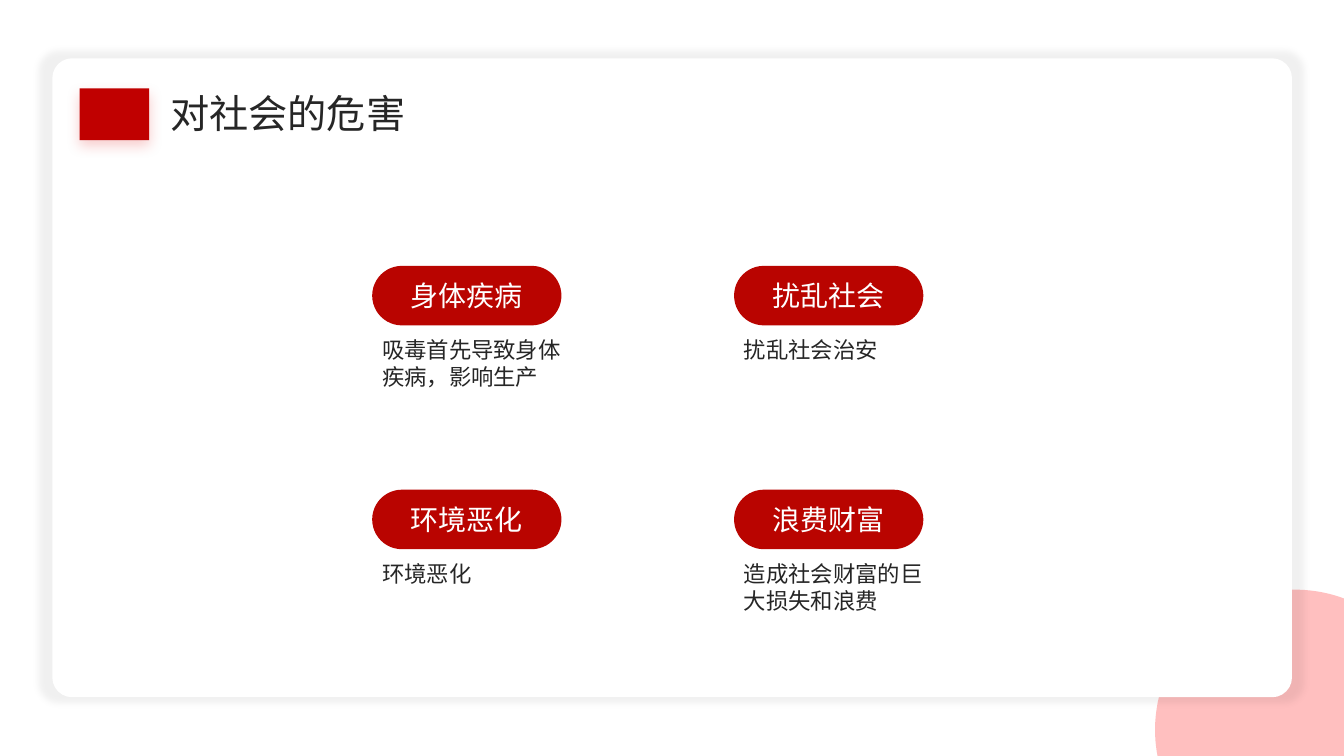
from math import asin, acos, cos, sin, pi

from lxml.etree import SubElement
from pptx import Presentation
from pptx.dml.color import RGBColor
from pptx.enum.shapes import MSO_SHAPE as Shape
from pptx.enum.text import MSO_ANCHOR as Anchor, MSO_AUTO_SIZE as AutoSize, PP_ALIGN as Align
from pptx.oxml.ns import qn
from pptx.util import Cm, Pt

FONT = "Noto Sans CJK SC"
WIDTH, HEIGHT = 33.87, 19.05
RED, PILL_RED, PINK, DARK, WHITE = "C00000", "B90400", "FFBFBF", "262626", "FFFFFF"


def color(hex_code):
    return RGBColor.from_string(hex_code)


def paint(sp, hex_code):
    sp.shadow.inherit = False
    sp.fill.solid()
    sp.fill.fore_color.rgb = color(hex_code)
    sp.line.fill.background()


def add_shape(s, kind, box, hex_code, adj=None):
    sp = s.shapes.add_shape(kind, *map(Cm, box))
    paint(sp, hex_code)
    if adj is not None:
        sp.adjustments[0] = adj
    return sp


def add_shadow(sp, hex_code, alpha, blur, dist=0, angle=0, scale=100):
    effects = sp._element.spPr.find(qn("a:effectLst"))
    shadow = SubElement(effects, qn("a:outerShdw"), blurRad=str(Pt(blur)), dist=str(Pt(dist)),
                        dir=str(angle * 60000), sx=str(scale * 1000), sy=str(scale * 1000),
                        algn="ctr", rotWithShape="0")
    clr = SubElement(shadow, qn("a:srgbClr"), val=hex_code)
    SubElement(clr, qn("a:alpha"), val=str(alpha * 1000))


def set_text(sp, text, size, hex_code, align=Align.LEFT, anchor=Anchor.TOP, wrap=True):
    tf = sp.text_frame
    tf.word_wrap = wrap
    tf.vertical_anchor = anchor
    p = tf.paragraphs[0]
    p.text = text
    p.alignment = align
    p.font.size = Pt(size)
    p.font.color.rgb = color(hex_code)
    p.font.name = FONT
    SubElement(p.font._rPr, qn("a:ea"), typeface=FONT)
    return tf


def add_corner_disc(s, cx, cy, radius, steps=60):
    """Part of a disc that lies within the bottom right corner of the slide."""
    start = pi - asin((HEIGHT - cy) / radius)
    end = 2 * pi - acos((WIDTH - cx) / radius)
    angles = [start + (end - start) * i / steps for i in range(steps + 1)]
    arc = [(Cm(cx + radius * cos(a)), Cm(cy + radius * sin(a))) for a in angles]
    builder = s.shapes.build_freeform(*arc[0])
    builder.add_line_segments(arc[1:] + [(Cm(WIDTH), Cm(HEIGHT))], close=True)
    paint(builder.convert_to_shape(), PINK)


def add_card(s, box):
    sp = add_shape(s, Shape.ROUNDED_RECTANGLE, box, WHITE, 0.5 / box[3])
    add_shadow(sp, "000000", 5, 5, scale=102)


def add_header(s, box, text):
    x, y, w, h = box
    # Plain marker beside the title
    marker = add_shape(s, Shape.RECTANGLE, (x, y + 0.1, 1.75, 1.3), RED)
    add_shadow(marker, "DE0000", 20, 10, 4, 90)
    # Title, brought in front of the card
    title = s.shapes.title
    s.shapes._spTree.append(title._element)
    title.left, title.top, title.width, title.height = map(Cm, (x + 2.03, y, w - 2.03, h))
    tf = set_text(title, text, 28, DARK, wrap=False)
    tf.auto_size = AutoSize.SHAPE_TO_FIT_TEXT


def add_harm(s, box, heading, body):
    x, y, w, h = box
    pill = add_shape(s, Shape.ROUNDED_RECTANGLE, (x, y, 4.77, 1.5), PILL_RED, 0.5)
    set_text(pill, heading, 20, WHITE, Align.CENTER, Anchor.MIDDLE)
    note = s.shapes.add_textbox(*map(Cm, (x, y + 1.65, w, h - 1.65)))
    tf = set_text(note, body, 16, DARK)
    tf.auto_size = AutoSize.SHAPE_TO_FIT_TEXT


def add_harm_grid(s, box, harms, columns=2):
    x, y, w, h = box
    cell_w, cell_h = 5.1, 3.28
    rows = len(harms) // columns
    step_x = (w - cell_w) / (columns - 1)
    step_y = (h - cell_h) / (rows - 1)
    for i, (heading, body) in enumerate(harms):
        row, col = divmod(i, columns)
        add_harm(s, (x + col * step_x, y + row * step_y, cell_w, cell_h), heading, body)


def main():
    prs = Presentation()
    prs.slide_width, prs.slide_height = Cm(WIDTH), Cm(HEIGHT)
    s = prs.slides.add_slide(prs.slide_layouts[5])

    # Backdrop
    add_corner_disc(s, 32.64, 18.39, 3.53)
    add_card(s, (1.32, 1.47, 31.24, 16.1))

    # Content
    add_header(s, (2.01, 2.13, 8.53, 1.45), "对社会的危害")
    add_harm_grid(s, (9.38, 6.7, 14.22, 8.92), [
        ("身体疾病", "吸毒首先导致身体疾病，影响生产"),
        ("扰乱社会", "扰乱社会治安"),
        ("环境恶化", "环境恶化"),
        ("浪费财富", "造成社会财富的巨大损失和浪费"),
    ])
    prs.save("out.pptx")


if __name__ == "__main__":
    main()
